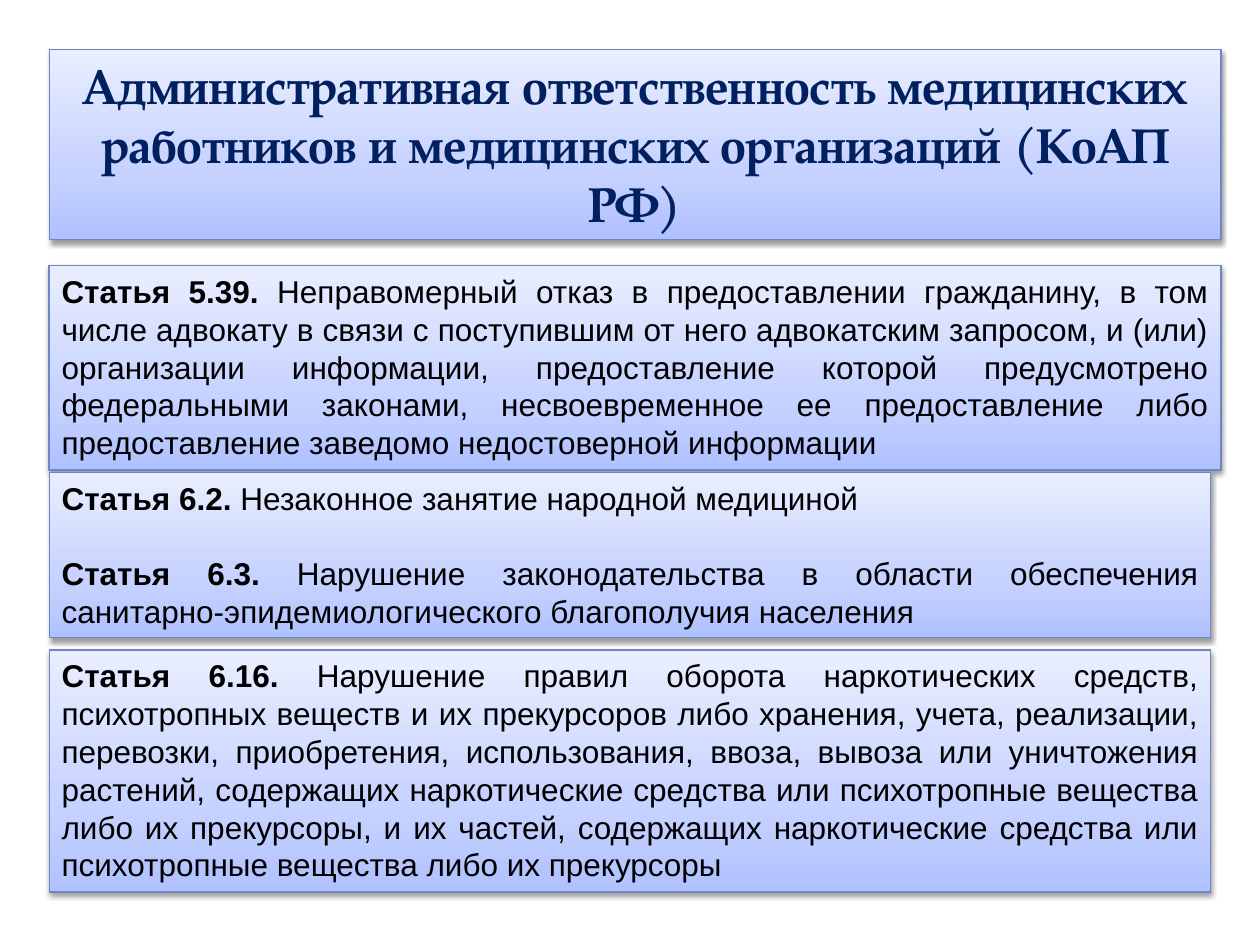
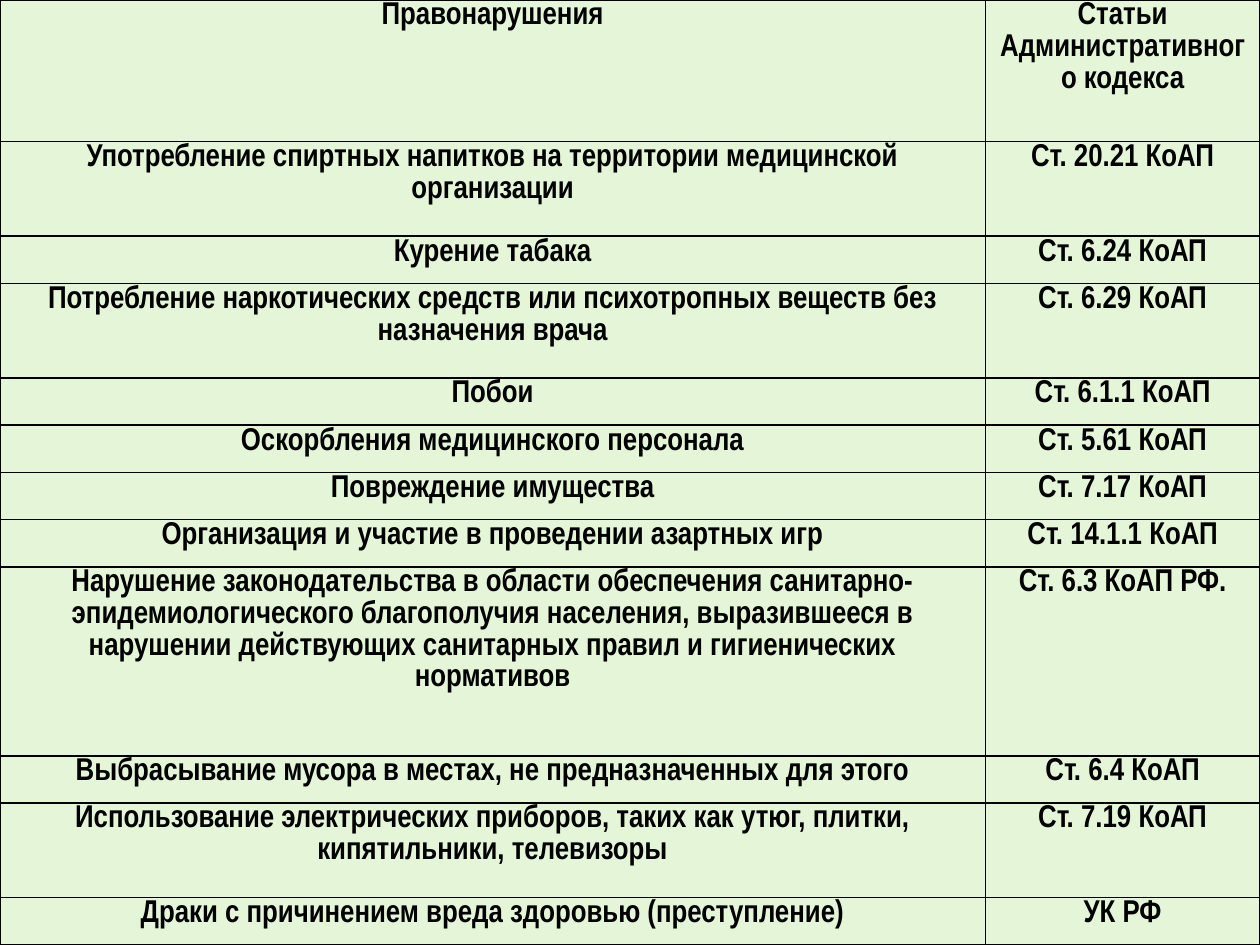
from pptx import Presentation, util as u
from pptx.dml.color import RGBColor
from pptx.enum import shapes, text
from pptx.oxml import parse_xml
from pptx.oxml.ns import nsdecls

# Content
TITLE = ("Административная ответственность медицинских работников "
         "и медицинских организаций (КоАП РФ)")
# Each panel: top, width, height, [(article, description), ...]
PANELS = [
    (2.11, 9.3, 1.62, [
        ("Статья 5.39.", "Неправомерный отказ в предоставлении гражданину, в том числе "
         "адвокату в связи с поступившим от него адвокатским запросом, и (или) организации "
         "информации, предоставление которой предусмотрено федеральными законами, "
         "несвоевременное ее предоставление либо предоставление заведомо недостоверной "
         "информации")]),
    (3.75, 9.22, 1.31, [
        ("Статья 6.2.", "Незаконное занятие народной медициной"),
        ("Статья 6.3.", "Нарушение законодательства в области обеспечения "
         "санитарно-эпидемиологического благополучия населения")]),
    (5.16, 9.22, 1.92, [
        ("Статья 6.16.", "Нарушение правил оборота наркотических средств, психотропных "
         "веществ и их прекурсоров либо хранения, учета, реализации, перевозки, "
         "приобретения, использования, ввоза, вывоза или уничтожения растений, содержащих "
         "наркотические средства или психотропные вещества либо их прекурсоры, и их частей, "
         "содержащих наркотические средства или психотропные вещества либо их прекурсоры")]),
]
# Each row: height in grid units, offence, article
OFFENCES = [
    (3, "Правонарушения", "Статьи Административного кодекса"),
    (2, "Употребление спиртных напитков на территории медицинской организации",
     "Ст. 20.21 КоАП"),
    (1, "Курение табака", "Ст. 6.24 КоАП"),
    (2, "Потребление наркотических средств или психотропных веществ без назначения врача",
     "Ст. 6.29 КоАП"),
    (1, "Побои", "Ст. 6.1.1 КоАП"),
    (1, "Оскорбления медицинского персонала", "Ст. 5.61 КоАП"),
    (1, "Повреждение имущества", "Ст. 7.17 КоАП"),
    (1, "Организация и участие в проведении азартных игр", "Ст. 14.1.1 КоАП"),
    (4, "Нарушение законодательства в области обеспечения санитарно-эпидемиологического "
     "благополучия населения, выразившееся в нарушении действующих санитарных правил "
     "и гигиенических нормативов", "Ст. 6.3 КоАП РФ."),
    (1, "Выбрасывание мусора в местах, не предназначенных для этого", "Ст. 6.4 КоАП"),
    (2, "Использование электрических приборов, таких как утюг, плитки, кипятильники, "
     "телевизоры", "Ст. 7.19 КоАП"),
    (1, "Драки с причинением вреда здоровью (преступление)", "УК РФ"),
]

# Shared style
WIDTH, HEIGHT, MARGIN = 10, 7.5, 0.39
BLACK, NAVY, EDGE, GREEN = "000000", "002060", "6E86C6", "E5F6D8"
GRADIENT = [(0, "B0C1FF"), (35, "C6D2FF"), (100, "E9EEFF")]
COLUMN_SHARES = (0.782, 0.218)


def rgb(value):
    return RGBColor.from_string(value)


def set_font(font, name, size, color, bold=None):
    font.name, font.size, font.bold = name, u.Pt(size), bold
    font.color.rgb = rgb(color)


def style_panel(sp, top, width, height):
    """Place a shape and give it the gradient, edge and shadow of a panel."""
    sp.left, sp.top = u.Inches(MARGIN), u.Inches(top)
    sp.width, sp.height = u.Inches(width), u.Inches(height)
    stops = "".join(f'<a:gs pos="{pos * 1000}"><a:srgbClr val="{color}"/></a:gs>'
                    for pos, color in GRADIENT)
    props = sp._element.spPr
    props.append(parse_xml(
        f'<a:gradFill {nsdecls("a")} rotWithShape="1"><a:gsLst>{stops}</a:gsLst>'
        '<a:lin ang="16200000" scaled="0"/></a:gradFill>'))
    sp.line.color.rgb = rgb(EDGE)
    sp.line.width = u.Pt(0.75)
    props.append(parse_xml(
        f'<a:effectLst {nsdecls("a")}><a:outerShdw blurRad="{u.Pt(3.1)}" '
        f'dist="{u.Pt(1.6)}" dir="5400000" rotWithShape="0"><a:srgbClr val="{BLACK}">'
        '<a:alpha val="38000"/></a:srgbClr></a:outerShdw></a:effectLst>'))
    tf = sp.text_frame
    tf.word_wrap = True
    tf.auto_size = text.MSO_AUTO_SIZE.SHAPE_TO_FIT_TEXT
    tf.vertical_anchor = text.MSO_ANCHOR.TOP
    return tf


def style_cell(cell, words):
    cell.margin_left = cell.margin_right = u.Inches(0.07)
    cell.margin_top = cell.margin_bottom = 0
    cell.text = words
    p = cell.text_frame.paragraphs[0]
    p.alignment, p.line_spacing = text.PP_ALIGN.CENTER, 1.07
    set_font(p.font, "Arial Narrow", 18, BLACK, True)
    for side in ("lnL", "lnR", "lnT", "lnB"):
        cell._tc.get_or_add_tcPr().append(parse_xml(
            f'<a:{side} {nsdecls("a")} w="{u.Pt(1)}"><a:solidFill>'
            f'<a:srgbClr val="{BLACK}"/></a:solidFill></a:{side}>'))
    cell.fill.solid()
    cell.fill.fore_color.rgb = rgb(GREEN)


def build_articles(prs):
    s = prs.slides.add_slide(prs.slide_layouts[5])
    # Title
    tf = style_panel(s.shapes.title, 0.39, 9.3, 1.51)
    tf.text = TITLE
    p = tf.paragraphs[0]
    p.alignment = text.PP_ALIGN.CENTER
    set_font(p.font, "TeX Gyre Pagella", 28, NAVY, True)
    # Article panels
    for top, width, height, articles in PANELS:
        sp = s.shapes.add_shape(shapes.MSO_SHAPE.RECTANGLE, 0, 0, 0, 0)
        tf = style_panel(sp, top, width, height)
        for i, (article, description) in enumerate(articles):
            p = tf.add_paragraph() if i else tf.paragraphs[0]
            p.alignment = text.PP_ALIGN.JUSTIFY
            p.space_before = u.Pt(21.5 if i else 0)
            set_font(p.font, "Arial", 18, BLACK)
            r = p.add_run()
            r.text, r.font.bold = article, True
            p.add_run().text = " " + description


def build_offences(prs):
    s = prs.slides.add_slide(prs.slide_layouts[6])
    table = s.shapes.add_table(len(OFFENCES), len(COLUMN_SHARES), 0, 0,
                               prs.slide_width, prs.slide_height).table
    table.first_row = table.horz_banding = False
    for column, share in zip(table.columns, COLUMN_SHARES):
        column.width = u.Inches(WIDTH * share)
    unit = HEIGHT / sum(units for units, *_ in OFFENCES)
    for row, (units, *words) in zip(table.rows, OFFENCES):
        row.height = u.Inches(units * unit)
        for cell, value in zip(row.cells, words):
            style_cell(cell, value)


def main():
    prs = Presentation()
    prs.slide_width, prs.slide_height = u.Inches(WIDTH), u.Inches(HEIGHT)
    build_articles(prs)
    build_offences(prs)
    prs.save("out.pptx")


if __name__ == "__main__":
    main()
